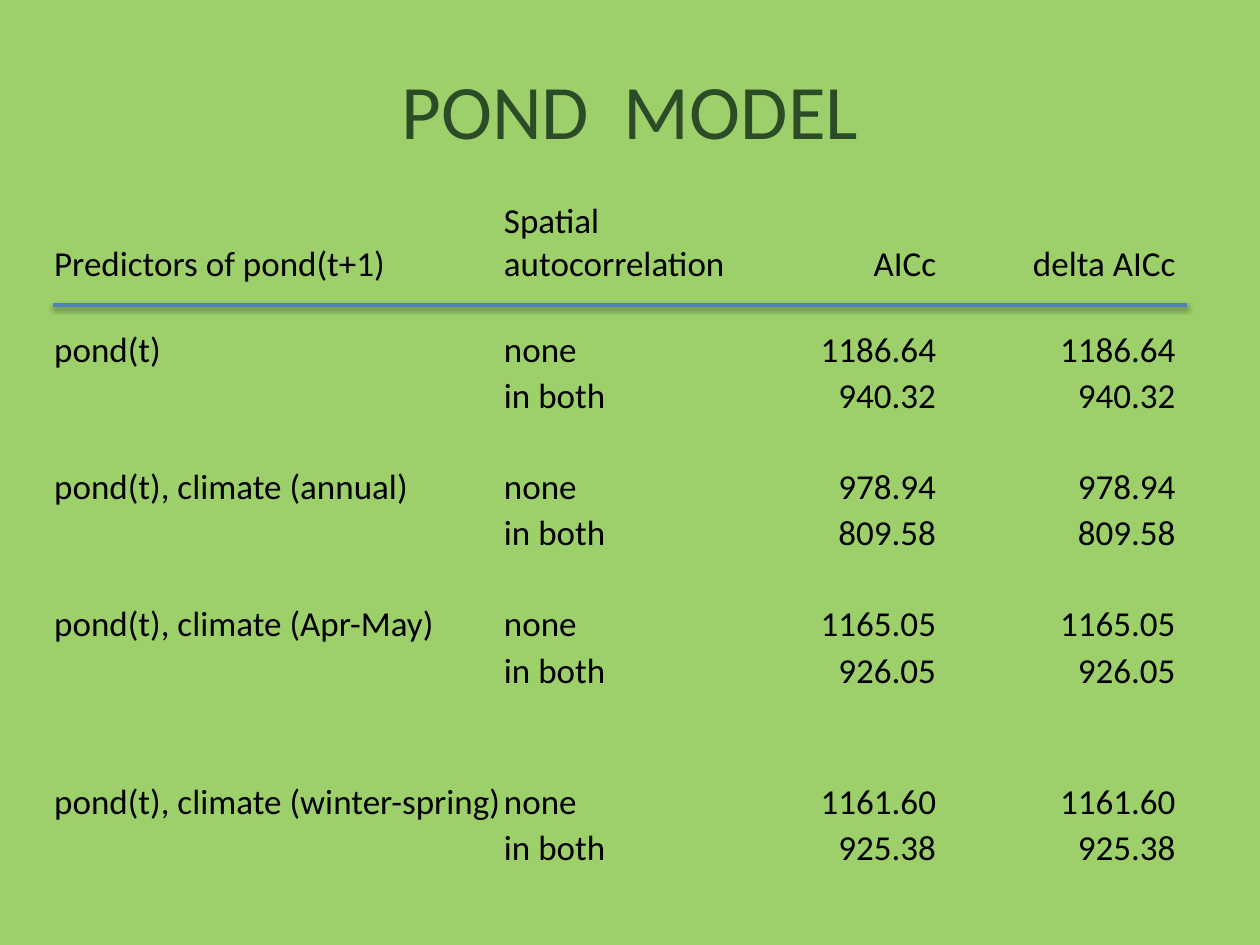
from dataclasses import dataclass

from lxml import etree
from pptx import Presentation
from pptx.dml.color import RGBColor
from pptx.enum.shapes import MSO_CONNECTOR
from pptx.enum.text import MSO_ANCHOR, PP_ALIGN
from pptx.oxml.ns import qn
from pptx.util import Inches, Pt

LEFT, CENTER, RIGHT = PP_ALIGN.LEFT, PP_ALIGN.CENTER, PP_ALIGN.RIGHT
MIDDLE, BOTTOM = MSO_ANCHOR.MIDDLE, MSO_ANCHOR.BOTTOM
STRAIGHT = MSO_CONNECTOR.STRAIGHT
NO_GRID_STYLE = "{2D5ABB26-0587-4C30-8999-92F81FD0307C}"


@dataclass
class Theme:
    font: str = "Calibri"
    background: str = "9DD06A"
    title: str = "2C4C28"
    text: str = "000000"
    rule: str = "4F81BD"
    shadow: str = "000000"
    title_size: int = 44
    table_size: int = 20


class SlideBuilder:
    def __init__(self, prs, theme):
        self.theme = theme
        self.s = prs.slides.add_slide(prs.slide_layouts[5])
        fill = self.s.background.fill
        fill.solid()
        fill.fore_color.rgb = RGBColor.from_string(theme.background)

    def add_text(self, p, text, size, color, align):
        p.alignment = align
        r = p.add_run()
        r.text = text
        r.font.name = self.theme.font
        r.font.size = Pt(size)
        r.font.color.rgb = RGBColor.from_string(color)

    def title(self, text, left, top, width, height):
        sp = self.s.shapes.title
        sp.left, sp.top = Inches(left), Inches(top)
        sp.width, sp.height = Inches(width), Inches(height)
        tf = sp.text_frame
        tf.vertical_anchor = MIDDLE
        self.add_text(tf.paragraphs[0], text, self.theme.title_size,
                      self.theme.title, CENTER)

    def table(self, rows, heights, widths, aligns, left, top):
        frame = self.s.shapes.add_table(
            len(rows), len(widths), Inches(left), Inches(top),
            Inches(sum(widths)), Inches(sum(heights)))
        table = frame.table
        table.first_row = table.horz_banding = False
        style = frame._element.find(".//" + qn("a:tableStyleId"))
        style.text = NO_GRID_STYLE
        for column, width in zip(table.columns, widths):
            column.width = Inches(width)
        for row, height, texts in zip(table.rows, heights, rows):
            row.height = Inches(height)
            for cell, text, align in zip(row.cells, texts, aligns):
                cell.fill.background()
                cell.vertical_anchor = BOTTOM
                cell.margin_left = cell.margin_right = Inches(0.01)
                cell.margin_top = cell.margin_bottom = 0
                if text:
                    self.add_text(cell.text_frame.paragraphs[0], text,
                                  self.theme.table_size, self.theme.text,
                                  align)

    def rule(self, x1, x2, y, width):
        line = self.s.shapes.add_connector(
            STRAIGHT, Inches(x1), Inches(y), Inches(x2), Inches(y))
        line.line.color.rgb = RGBColor.from_string(self.theme.rule)
        line.line.width = Pt(width)
        # Soft shadow straight below the line
        effects = etree.SubElement(line._element.spPr, qn("a:effectLst"))
        shadow = etree.SubElement(
            effects, qn("a:outerShdw"), blurRad=str(Pt(3.1)),
            dist=str(Pt(1.6)), dir="5400000", rotWithShape="0")
        color = etree.SubElement(shadow, qn("a:srgbClr"),
                                 val=self.theme.shadow)
        etree.SubElement(color, qn("a:alpha"), val="38000")


HEADER = ("Predictors of pond(t+1)", "Spatial autocorrelation",
          "AICc", "delta AICc")
BLANK = ("",) * len(HEADER)
# Predictors, AICc without and with spatial autocorrelation, first row height
MODELS = [
    ("pond(t)", "1186.64", "940.32", 0.37),
    ("pond(t), climate (annual)", "978.94", "809.58", 0.37),
    ("pond(t), climate (Apr-May)", "1165.05", "926.05", 0.37),
    ("pond(t), climate (winter-spring)", "1161.60", "925.38", 0.69),
]


def main():
    prs = Presentation()
    prs.slide_width, prs.slide_height = Inches(10), Inches(7.5)
    slide = SlideBuilder(prs, Theme())

    # Title
    slide.title("POND  MODEL", 0.5, 0.3, 9, 1.12)

    # Model comparison: a spacer row, then two rows for each model
    rows, heights = [HEADER], [0.69]
    for i, (predictors, none, both, height) in enumerate(MODELS):
        rows += [BLANK, (predictors, "none", none, none),
                 ("", "in both", both, both)]
        heights += [0.35 if i else 0.31, height, 0.37]
    slide.table(rows, heights, (3.57, 2.06, 1.39, 1.9),
                (LEFT, LEFT, RIGHT, RIGHT), 0.42, 1.58)

    # Rule under the header
    slide.rule(9.42, 0.42, 2.42, 2)

    prs.save("out.pptx")


if __name__ == "__main__":
    main()
